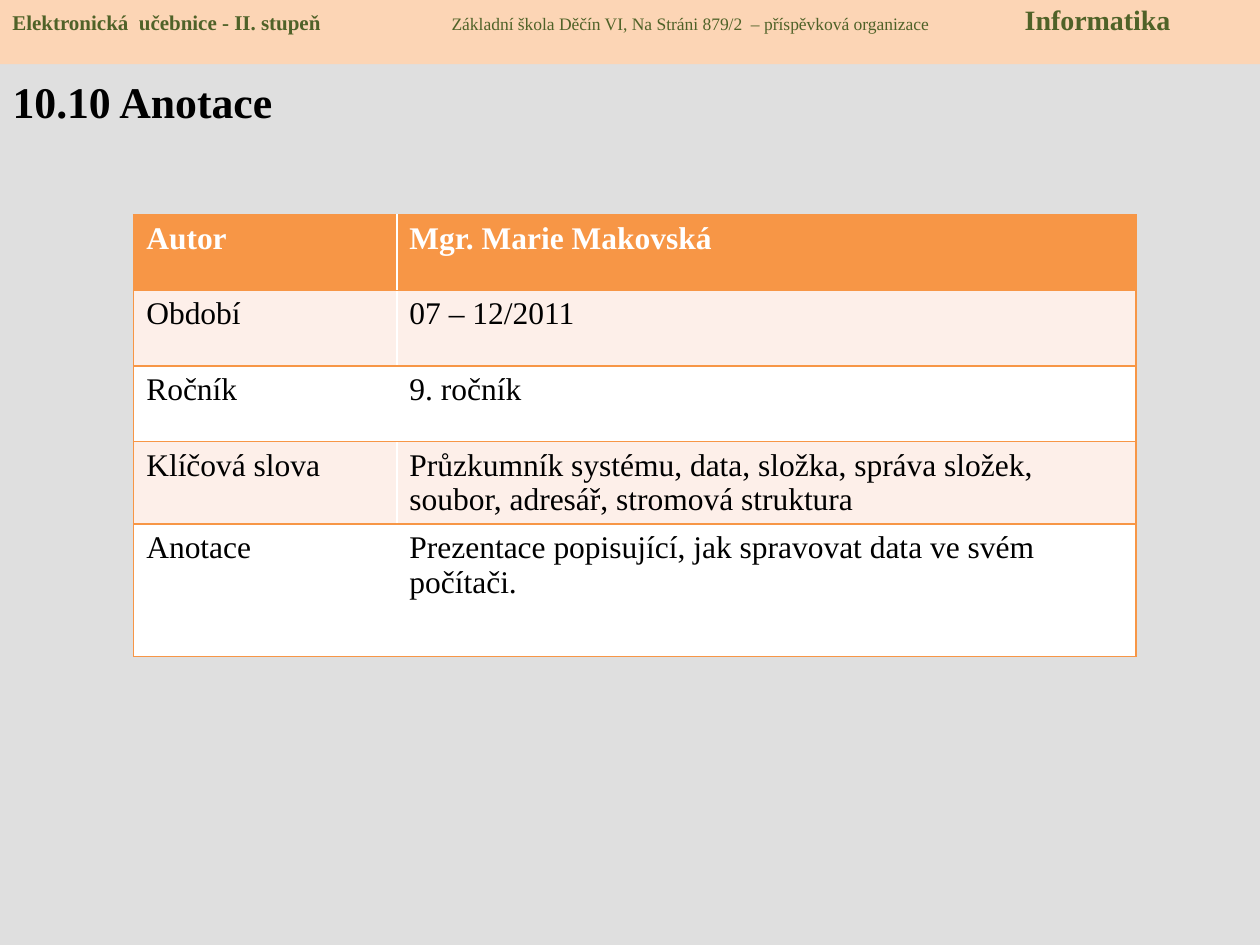
"""Build the annotation slide of a school computing textbook."""
from lxml.etree import SubElement
from pptx import Presentation
from pptx.dml.color import RGBColor
from pptx.enum.shapes import MSO_SHAPE
from pptx.enum.text import MSO_ANCHOR, PP_ALIGN
from pptx.oxml.ns import qn
from pptx.util import Pt

HUES = {
    "page": "DFDFDF", "band": "FCD5B5", "green": "4F6228", "head": "F79646",
    "tint": "FDEFE9", "white": "FFFFFF", "black": "000000",
}


def tone(name):
    return RGBColor.from_string(HUES[name])


def write(para, text, size=18, color="black", bold=False):
    run = para.add_run()
    run.text = text
    run.font.name = "Times New Roman"
    run.font.size = Pt(size)
    run.font.bold = bold
    run.font.color.rgb = tone(color)


deck = Presentation()
deck.slide_width, deck.slide_height = Pt(720), Pt(540)
slide = deck.slides.add_slide(deck.slide_layouts[5])
slide.background.fill.solid()
slide.background.fill.fore_color.rgb = tone("page")

title = slide.shapes.title
title.left, title.top, title.width, title.height = Pt(0), Pt(36.7), Pt(230), Pt(46.8)
frame = title.text_frame
frame.vertical_anchor = MSO_ANCHOR.TOP
frame.margin_top = Pt(6)
para = frame.paragraphs[0]
para.alignment = PP_ALIGN.LEFT
write(para, "10.10 Anotace", size=25, bold=True)

rows = [
    ("Autor", "Mgr. Marie Makovská"),
    ("Období", "07 – 12/2011"),
    ("Ročník", "9. ročník"),
    ("Klíčová slova", "Průzkumník systému, data, složka, správa složek, soubor, adresář, stromová struktura"),
    ("Anotace", "Prezentace popisující, jak spravovat data ve svém počítači."),
]
tall = [43.2] * 4 + [75.6]
wide = [150.4, 422.4]
grid = slide.shapes.add_table(
    len(rows), len(wide), Pt(76.4), Pt(122.8), Pt(sum(wide)), Pt(sum(tall))
).table
for col, width in zip(grid.columns, wide):
    col.width = Pt(width)
for i, (row, height) in enumerate(zip(rows, tall)):
    grid.rows[i].height = Pt(height)
    shade = "head" if i == 0 else "tint" if i % 2 else "white"
    for j, text in enumerate(row):
        cell = grid.cell(i, j)
        write(cell.text_frame.paragraphs[0], text,
              color="white" if i == 0 else "black", bold=i == 0)
        props = cell._tc.get_or_add_tcPr()
        for side in ("lnR" if j else "lnL", "lnT", "lnB"):
            line = SubElement(props, qn("a:" + side), w=str(Pt(1)))
            fill = SubElement(line, qn("a:solidFill"))
            SubElement(fill, qn("a:srgbClr"), val=HUES["head"])
        cell.fill.solid()
        cell.fill.fore_color.rgb = tone(shade)

band = slide.shapes.add_shape(MSO_SHAPE.RECTANGLE, Pt(0), Pt(-2.2), Pt(720), Pt(38.9))
band.shadow.inherit = False
band.fill.solid()
band.fill.fore_color.rgb = tone("band")
band.line.fill.background()
frame = band.text_frame
frame.word_wrap = True
frame.vertical_anchor = MSO_ANCHOR.TOP
para = frame.paragraphs[0]
para.alignment = PP_ALIGN.LEFT
tabs = SubElement(para._p.get_or_add_pPr(), qn("a:tabLst"))
for stop in (251, 578.5):
    SubElement(tabs, qn("a:tab"), pos=str(Pt(stop)), algn="l")
write(para, "Elektronická  učebnice - II. stupeň\t", size=12, color="green", bold=True)
write(para, "Základní škola Děčín VI, Na Stráni 879/2  – příspěvková organizace\t", size=10, color="green")
write(para, "Informatika", size=16, color="green", bold=True)

deck.save("out.pptx")
